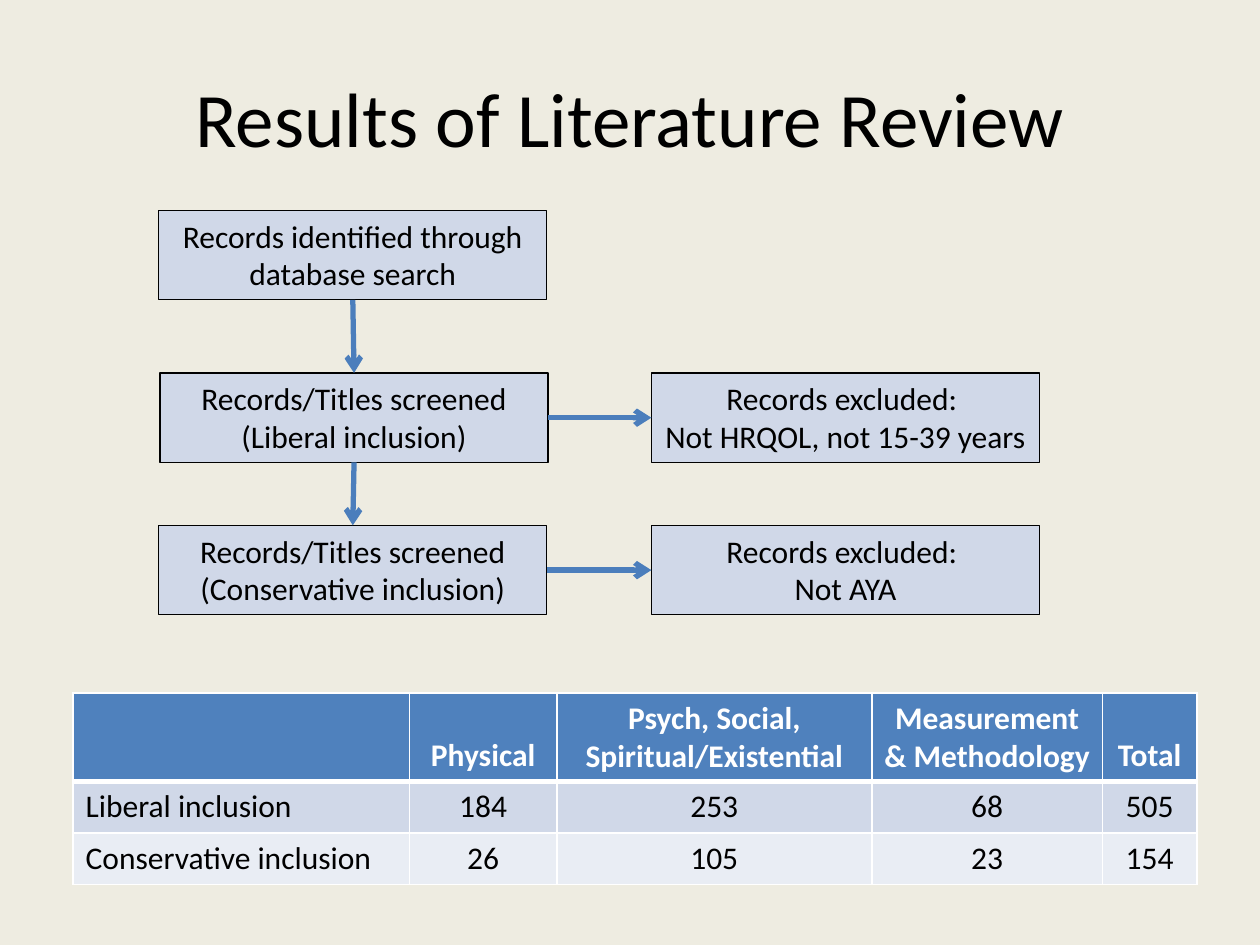
from typing import NamedTuple

from lxml import etree
from pptx import Presentation
from pptx.dml.color import RGBColor
from pptx.enum import shapes, text
from pptx.oxml import ns
from pptx.util import Inches, Pt

FONT = "Calibri"
BACKGROUND = RGBColor(0xEE, 0xEC, 0xE1)
BLACK = RGBColor(0, 0, 0)
WHITE = RGBColor(0xFF, 0xFF, 0xFF)
HEADER_BLUE = RGBColor(0x4F, 0x81, 0xBD)
ARROW_BLUE = RGBColor(0x4B, 0x7E, 0xBC)
PALE_BLUE = RGBColor(0xD0, 0xD8, 0xE8)
PALER_BLUE = RGBColor(0xE9, 0xED, 0xF4)

BOX_WIDTH, BOX_HEIGHT = 3.08, 0.71
LEFT_COLUMN, RIGHT_COLUMN = 1.26, 5.17
TOP, RIGHT, BOTTOM, LEFT = 0, 3, 2, 1  # connection sites of a rectangle


class Step(NamedTuple):
    name: str
    left: float
    top: float
    wording: str


class Arrow(NamedTuple):
    start: str
    start_site: int
    end: str
    end_site: int


STEPS = [
    Step("identified", LEFT_COLUMN, 1.67, "Records identified through database search"),
    Step("liberal", 1.27, 2.96, "Records/Titles screened (Liberal inclusion)"),
    Step("liberal excluded", RIGHT_COLUMN, 2.96,
         "Records excluded: \nNot HRQOL, not 15-39 years"),
    Step("conservative", LEFT_COLUMN, 4.17,
         "Records/Titles screened\n(Conservative inclusion)"),
    Step("conservative excluded", RIGHT_COLUMN, 4.17, "Records excluded: \nNot AYA"),
]
ARROWS = [
    Arrow("identified", BOTTOM, "liberal", TOP),
    Arrow("liberal", BOTTOM, "conservative", TOP),
    Arrow("liberal", RIGHT, "liberal excluded", LEFT),
    Arrow("conservative", RIGHT, "conservative excluded", LEFT),
]
COLUMN_WIDTHS = [2.67, 1.17, 2.5, 1.83, 0.75]
ROW_HEIGHTS = [0.69, 0.41, 0.41]
ROW_FILLS = [HEADER_BLUE, PALE_BLUE, PALER_BLUE]
ROWS = [
    ["", "Physical", "Psych, Social, Spiritual/Existential",
     "Measurement & Methodology", "Total"],
    ["Liberal inclusion", "184", "253", "68", "505"],
    ["Conservative inclusion", "26", "105", "23", "154"],
]


def format_text(frame, size: float, color: RGBColor, bold: bool = False,
                align=text.PP_ALIGN.CENTER) -> None:
    for para in frame.paragraphs:
        para.alignment = align
        para.font.size = Pt(size)
        for span in para.runs:
            span.font.name = FONT
            span.font.size = Pt(size)
            span.font.bold = bold
            span.font.color.rgb = color


def add_title(slide) -> None:
    title = slide.shapes.title
    title.left, title.top = Inches(0.5), Inches(0.3)
    title.width, title.height = Inches(9), Inches(1.25)
    title.text_frame.text = "Results of Literature Review"
    title.text_frame.vertical_anchor = text.MSO_ANCHOR.MIDDLE
    format_text(title.text_frame, 44, BLACK)


def add_step(slide, step: Step):
    box = slide.shapes.add_shape(
        shapes.MSO_SHAPE.RECTANGLE, Inches(step.left), Inches(step.top),
        Inches(BOX_WIDTH), Inches(BOX_HEIGHT))
    box.shadow.inherit = False
    box.fill.solid()
    box.fill.fore_color.rgb = PALE_BLUE
    box.line.color.rgb = BLACK
    box.line.width = Pt(0.75)
    frame = box.text_frame
    frame.text = step.wording
    frame.word_wrap = True
    frame.auto_size = text.MSO_AUTO_SIZE.SHAPE_TO_FIT_TEXT
    frame.vertical_anchor = text.MSO_ANCHOR.TOP
    format_text(frame, 18, BLACK)
    return box


def add_arrow(slide, arrow: Arrow, boxes: dict) -> None:
    connector = slide.shapes.add_connector(shapes.MSO_CONNECTOR.STRAIGHT, 0, 0, 0, 0)
    connector.begin_connect(boxes[arrow.start], arrow.start_site)
    connector.end_connect(boxes[arrow.end], arrow.end_site)
    connector.line.color.rgb = ARROW_BLUE
    connector.line.width = Pt(3)
    etree.SubElement(connector.line._get_or_add_ln(), ns.qn("a:tailEnd"), type="arrow")
    etree.SubElement(connector._element.spPr, ns.qn("a:effectLst"))


def add_bottom_border(cell, color: RGBColor, points: float) -> None:
    """Put the border before the cell's fill, as the schema orders them."""
    border = etree.Element(ns.qn("a:lnB"), w=str(Pt(points)))
    fill = etree.SubElement(border, ns.qn("a:solidFill"))
    etree.SubElement(fill, ns.qn("a:srgbClr"), val=str(color))
    cell._tc.get_or_add_tcPr().insert(0, border)


def add_results_table(slide) -> None:
    """The default table style supplies the thin white borders."""
    table = slide.shapes.add_table(
        len(ROWS), len(COLUMN_WIDTHS), Inches(0.58), Inches(5.5),
        Inches(sum(COLUMN_WIDTHS)), Inches(sum(ROW_HEIGHTS))).table
    for column, width in zip(table.columns, COLUMN_WIDTHS):
        column.width = Inches(width)
    for r, (values, height, fill) in enumerate(zip(ROWS, ROW_HEIGHTS, ROW_FILLS)):
        table.rows[r].height = Inches(height)
        header = r == 0
        for c, value in enumerate(values):
            cell = table.cell(r, c)
            cell.text_frame.text = value
            cell.fill.solid()
            cell.fill.fore_color.rgb = fill
            cell.vertical_anchor = (
                text.MSO_ANCHOR.BOTTOM if header else text.MSO_ANCHOR.MIDDLE)
            if header:
                cell.margin_left = cell.margin_right = Inches(0.08)
                add_bottom_border(cell, WHITE, 3)
            format_text(cell.text_frame, 18, WHITE if header else BLACK, header,
                        text.PP_ALIGN.CENTER if c else text.PP_ALIGN.LEFT)


def main() -> None:
    deck = Presentation()
    deck.slide_width, deck.slide_height = Inches(10), Inches(7.5)
    slide = deck.slides.add_slide(deck.slide_layouts.get_by_name("Title Only"))
    slide.background.fill.solid()
    slide.background.fill.fore_color.rgb = BACKGROUND
    add_title(slide)
    boxes = {step.name: add_step(slide, step) for step in STEPS}
    add_results_table(slide)
    for arrow in ARROWS:
        add_arrow(slide, arrow, boxes)
    deck.save("out.pptx")


if __name__ == "__main__":
    main()
